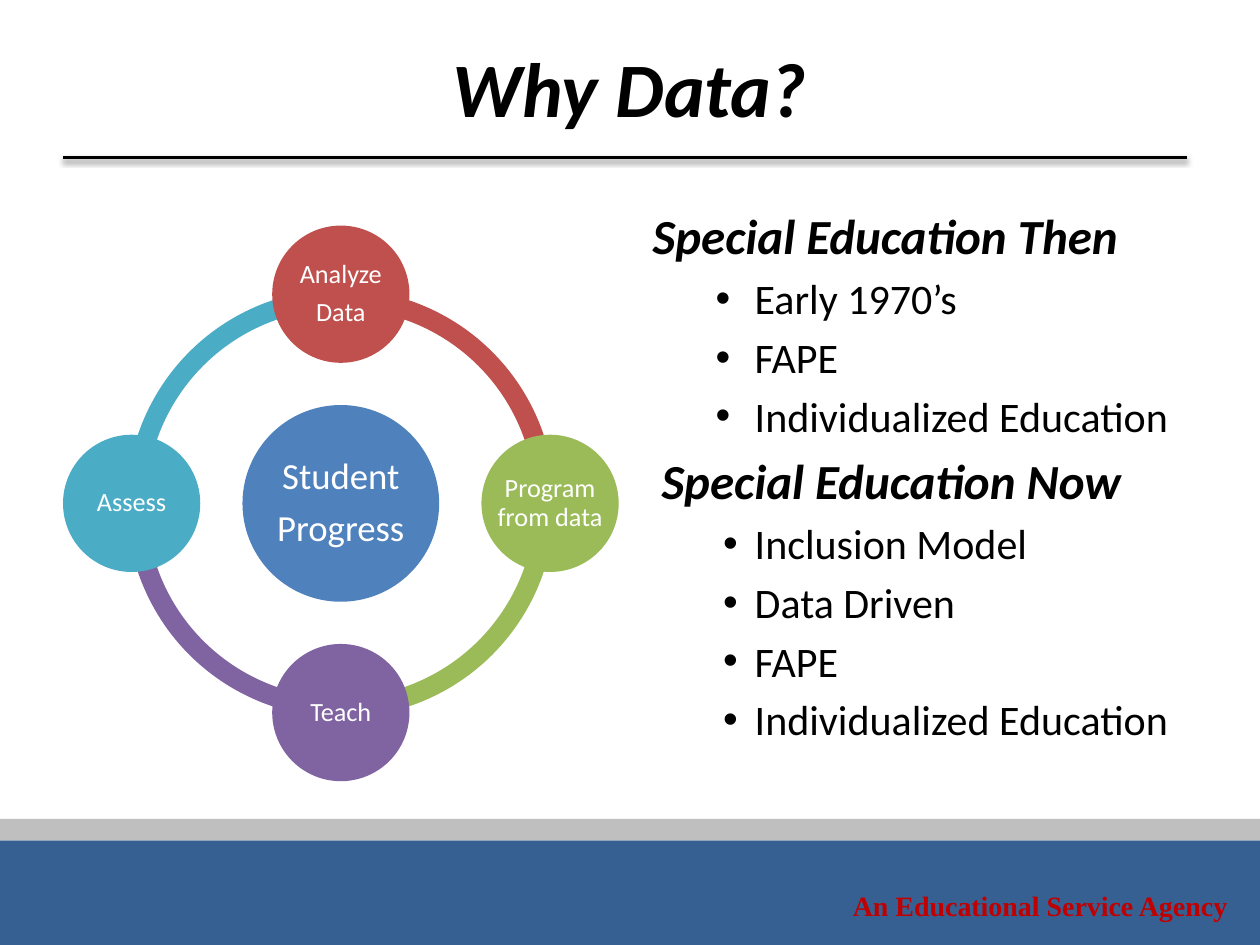
from math import cos, radians, sin

from lxml.etree import SubElement
from pptx import Presentation
from pptx.dml.color import RGBColor
from pptx.enum.shapes import MSO_CONNECTOR, MSO_SHAPE
from pptx.enum.text import MSO_ANCHOR, MSO_AUTO_SIZE, PP_ALIGN
from pptx.oxml.ns import qn
from pptx.util import Inches, Pt

COLOURS = {
    "ink": "000000", "white": "FFFFFF", "band": "376092", "stripe": "BFBFBF",
    "agency": "C00000", "hub": "4F81BD", "analyze": "C0504D",
    "program": "9BBB59", "teach": "8064A2", "assess": "4BACC6",
}
SLIDE_W, SLIDE_H = Inches(10), Inches(7.5)

# Boxes are (left, top, width, height) as shares of the slide
TITLE_BOX = (0.05, 0.04, 0.9, 0.104)
CYCLE_BOX = (0.05, 1.79 / 7.5, 0.441, 4.41 / 7.5)
LIST_BOX = (0.508, 1.58 / 7.5, 0.442, 4.83 / 7.5)
FOOTER_BOX = (0, 6.5 / 7.5, 1, 1 / 7.5)

# Steps clockwise from the right: angle, colour, lines
STEPS = [
    (0, "program", ["Program from data"]),
    (90, "teach", ["Teach"]),
    (180, "assess", ["Assess"]),
    (270, "analyze", ["Analyze", "Data"]),
]
# Groups of the list: heading, left and hanging indents, items, item hang
LIST_GROUPS = [
    ("Special Education Then", 0, 0.38, 0.38, 1, 0.31,
     ["Early 1970’s", "FAPE", "Individualized Education"]),
    ("Special Education Now", 1, 0.38, 0.31, 2, 0.25,
     ["Inclusion Model", "Data Driven", "FAPE", "Individualized Education"]),
]


def colour(name):
    return RGBColor.from_string(COLOURS[name])


def part(box, x, y, w, h):
    """Part of a box, given in shares of that box."""
    left, top, width, height = box
    return left + x * width, top + y * height, w * width, h * height


def emu(box):
    x, y, w, h = box
    return [int(x * SLIDE_W), int(y * SLIDE_H), int(w * SLIDE_W), int(h * SLIDE_H)]


def place(holder, box):
    holder.left, holder.top, holder.width, holder.height = emu(box)


def write(paragraph, text, size=24, color="ink", font="Calibri",
          bold=False, italic=False, align=None):
    paragraph.text = text
    paragraph.alignment = align
    face = paragraph.font
    face.name, face.size, face.bold, face.italic = font, Pt(size), bold, italic
    face.color.rgb = colour(color)


def add_filled(slide, kind, box, fill):
    shape = slide.shapes.add_shape(kind, *emu(box))
    shape.shadow.inherit = False
    shape.fill.solid()
    shape.fill.fore_color.rgb = colour(fill)
    shape.line.fill.background()
    return shape


def add_label(slide, box, lines, inset=0.02, spread=0.0, spacing=None,
              anchor=MSO_ANCHOR.MIDDLE, size=15, **style):
    frame = slide.shapes.add_textbox(*emu(box)).text_frame
    frame.word_wrap = True
    frame.vertical_anchor = anchor
    frame.margin_left = frame.margin_right = Inches(inset)
    frame.margin_top = frame.margin_bottom = Inches(min(inset, 0.05))
    for i, line in enumerate(lines):
        paragraph = frame.add_paragraph() if i else frame.paragraphs[0]
        write(paragraph, line, size=size, **style)
        paragraph.line_spacing = spacing
        paragraph.space_after = Pt(spread * size)


def set_bullet(paragraph, left, hang, char=None):
    props = paragraph._p.get_or_add_pPr()
    props.set("marL", str(Inches(left)))
    props.set("indent", str(-Inches(hang)))
    if char:
        SubElement(props, qn("a:buChar"), char=char)
    else:
        SubElement(props, qn("a:buNone"))


def add_footer(slide, box):
    add_filled(slide, MSO_SHAPE.RECTANGLE, part(box, 0, 0.17, 1, 0.83), "band")
    add_filled(slide, MSO_SHAPE.RECTANGLE, part(box, 0, 0, 1, 0.17), "stripe")
    add_label(slide, part(box, 0.592, 0.5, 0.392, 0.37),
              ["An Educational Service Agency"], inset=0.1, size=16,
              anchor=MSO_ANCHOR.TOP, font="Times New Roman", color="agency",
              bold=True, align=PP_ALIGN.RIGHT)


def add_title(slide, box):
    title = slide.shapes.title
    place(title, box)
    title.text_frame.vertical_anchor = MSO_ANCHOR.MIDDLE
    title.text_frame.auto_size = MSO_AUTO_SIZE.NONE
    write(title.text_frame.paragraphs[0], "Why Data?", size=44, bold=True,
          italic=True, align=PP_ALIGN.CENTER)

    # Rule under the title, with a soft shadow
    left, y, width, _ = emu(part(box, 0, 1.218, 0.991, 0))
    rule = slide.shapes.add_connector(MSO_CONNECTOR.STRAIGHT, left, y, left + width, y)
    rule.line.color.rgb = colour("ink")
    rule.line.width = Pt(2)
    effects = SubElement(rule._element.spPr, qn("a:effectLst"))
    shadow = SubElement(effects, qn("a:outerShdw"), blurRad=str(Pt(3.1)),
                        dist=str(Pt(1.6)), dir="5400000", rotWithShape="0")
    shade = SubElement(shadow, qn("a:srgbClr"), val=COLOURS["ink"])
    SubElement(shade, qn("a:alpha"), val="38000")


def add_disc(slide, box, fill, lines, **style):
    add_filled(slide, MSO_SHAPE.OVAL, box, fill)
    add_label(slide, box, lines, spread=0.35, spacing=0.9, color="white",
              align=PP_ALIGN.CENTER, **style)


def add_cycle(slide, box):
    ring, hub, node = 0.771, 0.354, 0.247

    def centred(size, x=0.5, y=0.5):
        return part(box, x - size / 2, y - size / 2, size, size)

    # Quarter arcs; the angle adjustment counts 0.6 for each degree
    for angle, fill, _ in STEPS:
        arc = add_filled(slide, MSO_SHAPE.BLOCK_ARC, centred(ring), fill)
        arc.adjustments[0] = angle * 0.6
        arc.adjustments[1] = (angle + 90) % 360 * 0.6
        arc.adjustments[2] = 0.046

    # Hub and steps
    add_disc(slide, centred(hub), "hub", ["Student", "Progress"], size=21, inset=0.03)
    reach = (1 - node) / 2
    for angle, fill, lines in STEPS:
        x = 0.5 + reach * cos(radians(angle))
        y = 0.5 + reach * sin(radians(angle))
        add_disc(slide, centred(node, x, y), fill, lines)


def add_list(slide, box):
    body = slide.placeholders[1]
    place(body, box)
    frame = body.text_frame
    frame.auto_size = MSO_AUTO_SIZE.NONE
    for i, (heading, level, left, hang, item_level, item_hang, items) in enumerate(LIST_GROUPS):
        head = frame.add_paragraph() if i else frame.paragraphs[0]
        head.level = level
        if not i:
            head.space_before = Pt(0)
        set_bullet(head, left, hang)
        write(head, heading, size=28, bold=True, italic=True)
        for item in items:
            entry = frame.add_paragraph()
            entry.level = item_level
            set_bullet(entry, 0.81, item_hang, "•")
            write(entry, item)


def main():
    deck = Presentation()
    deck.slide_width, deck.slide_height = SLIDE_W, SLIDE_H
    slide = deck.slides.add_slide(deck.slide_layouts[1])
    add_footer(slide, FOOTER_BOX)
    add_title(slide, TITLE_BOX)
    add_list(slide, LIST_BOX)
    add_cycle(slide, CYCLE_BOX)
    deck.save("out.pptx")


if __name__ == "__main__":
    main()
